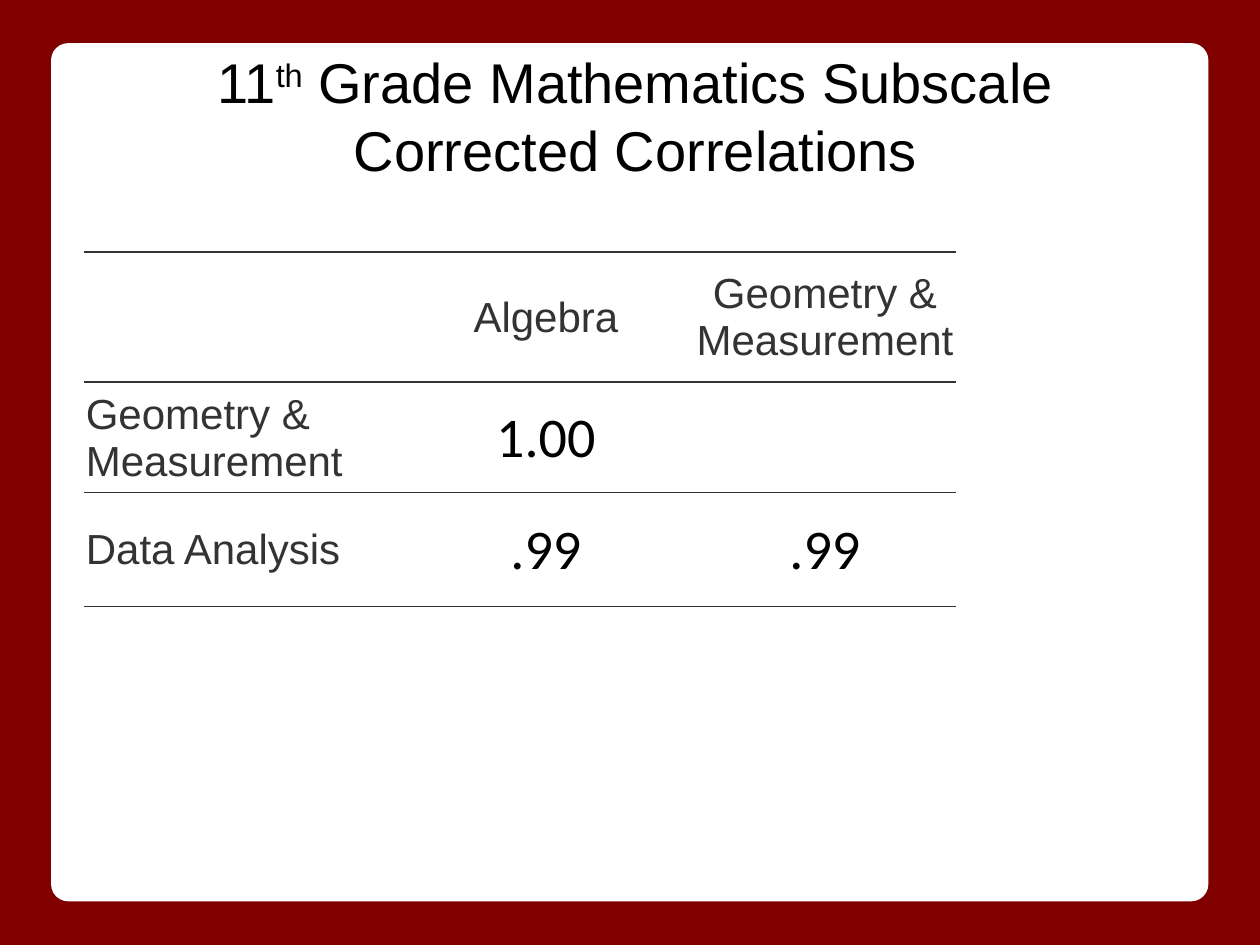
import lxml.etree
import pptx
import pptx.dml.color
import pptx.enum.shapes
import pptx.enum.text
import pptx.oxml.ns
import pptx.util

Cm = pptx.util.Cm
Pt = pptx.util.Pt
ALIGN = pptx.enum.text.PP_ALIGN
PLAIN_STYLE = "{2D5ABB26-0587-4C30-8999-92F81FD0307C}"
INK = "333333"
ROWS = [
    ["", "Algebra", "Geometry & Measurement"],
    ["Geometry & Measurement", "1.00", ""],
    ["Data Analysis", ".99", ".99"],
]
COLUMN_WIDTHS = [6.32, 5.97, 5.28]
ROW_HEIGHTS = [2.62, 2.23, 2.3]


def colour(code):
    """Turn a hex string into a colour."""
    return pptx.dml.color.RGBColor.from_string(code)


def add_span(para, text, font, size, code):
    """Append one run to a paragraph and return it."""
    span = para.add_run()
    span.text = text
    span.font.name = font
    span.font.size = Pt(size)
    span.font.color.rgb = colour(code)
    return span


def add_panel(page, left, top, width, height):
    """Place the white rounded panel on the red background."""
    page.background.fill.solid()
    page.background.fill.fore_color.rgb = colour("800000")
    panel = page.shapes.add_shape(
        pptx.enum.shapes.MSO_SHAPE.ROUNDED_RECTANGLE,
        Cm(left), Cm(top), Cm(width), Cm(height))
    panel.adjustments[0] = 0.02
    panel.shadow.inherit = False
    panel.fill.solid()
    panel.fill.fore_color.rgb = colour("FFFFFF")
    panel.line.fill.background()


def add_title(page, left, top, width, height):
    """Place the centred title with its raised ordinal."""
    box = page.shapes.add_textbox(Cm(left), Cm(top), Cm(width), Cm(height))
    box.text_frame.word_wrap = True
    para = box.text_frame.paragraphs[0]
    para.alignment = ALIGN.CENTER
    for text in ("11", "th", " Grade Mathematics Subscale Corrected Correlations"):
        span = add_span(para, text, "Arial", 32, "000000")
        if text == "th":
            span.font._element.set("baseline", "30000")


def rule_cell(cell):
    """Draw the rules above and below a cell."""
    properties = cell._tc.get_or_add_tcPr()
    qn = pptx.oxml.ns.qn
    for edge in ("a:lnT", "a:lnB"):
        line = lxml.etree.SubElement(properties, qn(edge), w=str(Pt(1)))
        fill = lxml.etree.SubElement(line, qn("a:solidFill"))
        lxml.etree.SubElement(fill, qn("a:srgbClr"), val=INK)


def fill_cell(cell, text, is_label, is_left):
    """Set the rules, margins and text of one cell."""
    rule_cell(cell)
    cell.fill.background()
    cell.vertical_anchor = pptx.enum.text.MSO_ANCHOR.MIDDLE
    cell.margin_left = cell.margin_right = cell.margin_top = Cm(0.03)
    cell.margin_bottom = 0
    if text:
        para = cell.text_frame.paragraphs[0]
        para.alignment = ALIGN.LEFT if is_left else ALIGN.CENTER
        style = ("Arial", 24, INK) if is_label else ("Calibri", 32, "000000")
        add_span(para, text, *style)


def add_correlations(page, left, top):
    """Place the table of corrected correlations."""
    frame = page.shapes.add_table(
        len(ROWS), len(COLUMN_WIDTHS), Cm(left), Cm(top),
        Cm(sum(COLUMN_WIDTHS)), Cm(sum(ROW_HEIGHTS)))
    table = frame.table
    table.first_row = table.horz_banding = False
    table._tbl.tblPr.find(pptx.oxml.ns.qn("a:tableStyleId")).text = PLAIN_STYLE
    for column, width in zip(table.columns, COLUMN_WIDTHS):
        column.width = Cm(width)
    for row, height in zip(table.rows, ROW_HEIGHTS):
        row.height = Cm(height)
    for r, texts in enumerate(ROWS):
        for c, text in enumerate(texts):
            fill_cell(table.cell(r, c), text, r == 0 or c == 0, c == 0)


def main():
    """Build the slide and save it."""
    deck = pptx.Presentation()
    deck.slide_width, deck.slide_height = Cm(25.4), Cm(19.05)
    page = deck.slides.add_slide(deck.slide_layouts[6])
    add_panel(page, 1.03, 0.87, 23.33, 17.3)
    add_title(page, 2.97, 0.84, 19.69, 3)
    add_correlations(page, 1.7, 5.08)
    deck.save("out.pptx")


if __name__ == "__main__":
    main()
